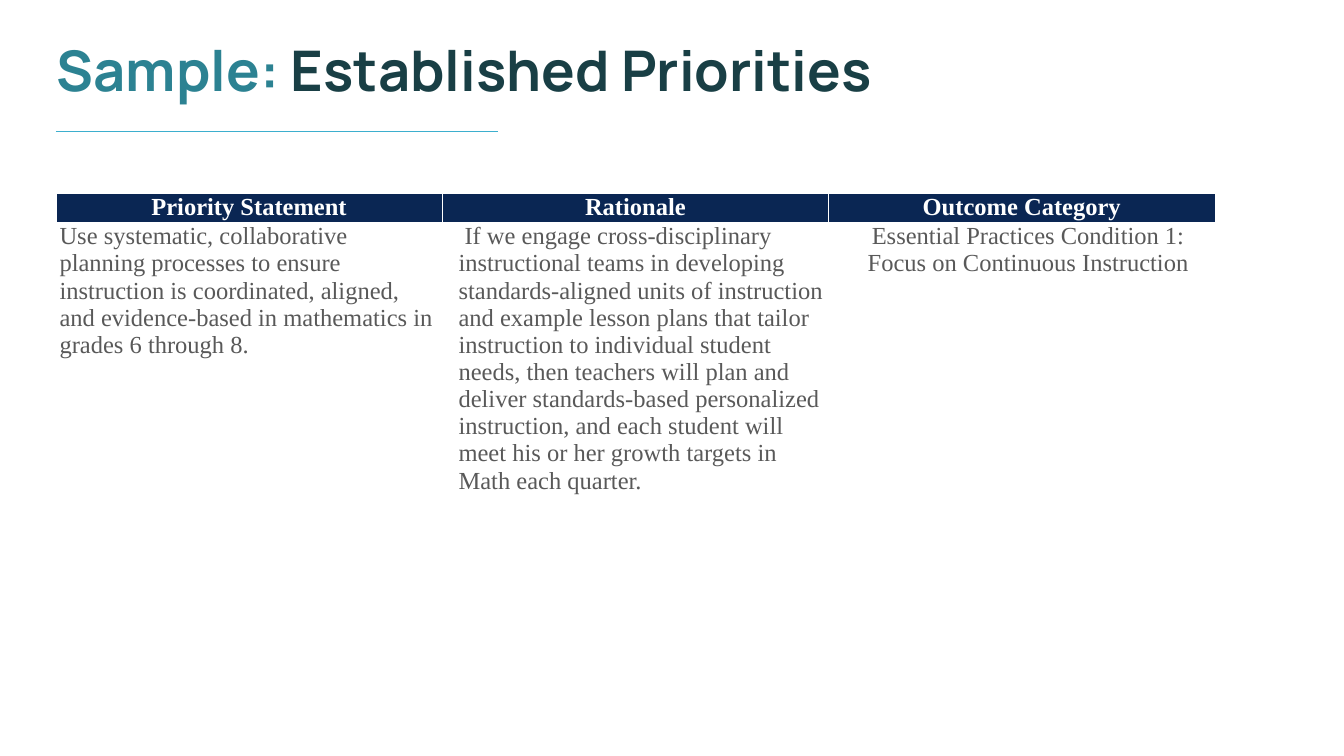
from collections import namedtuple
from dataclasses import dataclass

from lxml.etree import SubElement
from pptx import Presentation
from pptx.dml.color import RGBColor as Color
from pptx.enum.shapes import MSO_CONNECTOR as Connector
from pptx.enum.text import MSO_ANCHOR as Anchor, PP_ALIGN as Align
from pptx.oxml import parse_xml
from pptx.oxml.ns import nsdecls, qn
from pptx.util import Cm, Pt

Box = namedtuple("Box", "left top width height")


@dataclass(frozen=True)
class Theme:
    """Colours, fonts and type sizes of the slide."""
    teal: str = "2C8292"
    dark_teal: str = "193F45"
    rule: str = "3DAFCE"
    navy: str = "0A2653"
    grey: str = "595959"
    white: str = "FFFFFF"
    title_font: str = "Manrope"
    table_font: str = "Times New Roman"
    title_size: int = 80
    table_size: int = 35


THEME = Theme()

PRIORITIES = [
    ("Priority Statement",
     "Use systematic, collaborative planning processes to ensure instruction is "
     "coordinated, aligned, and evidence-based in mathematics in grades 6 through 8.",
     Align.LEFT, 0, 0),
    ("Rationale",
     "If we engage cross-disciplinary instructional teams in developing "
     "standards-aligned units of instruction and example lesson plans that tailor "
     "instruction to individual student needs, then teachers will plan and deliver "
     "standards-based personalized instruction, and each student will meet his or her "
     "growth targets in Math each quarter.",
     Align.LEFT, 0.64, 0.3),
    ("Outcome Category",
     "Essential Practices Condition 1: Focus on Continuous Instruction",
     Align.CENTER, 0.64, 0),
]


def style_font(font, name, size, color, bold):
    """Set the face, size, colour and weight of a font."""
    font.name = name
    font.size = Pt(size)
    font.bold = bold
    font.color.rgb = Color.from_string(color)


def add_title(slide, box):
    """Place the two-coloured title, centred vertically in the box."""
    shape = slide.shapes.add_textbox(*map(Cm, box))
    text_frame = shape.text_frame
    text_frame.word_wrap = True
    text_frame.vertical_anchor = Anchor.MIDDLE
    text_frame.margin_left = text_frame.margin_right = Cm(0.51)
    text_frame.margin_top = text_frame.margin_bottom = Cm(0.25)
    paragraph = text_frame.paragraphs[0]
    paragraph.line_spacing = 0.9
    for text, color in (("Sample:", THEME.teal),
                        (" Established Priorities", THEME.dark_teal)):
        run = paragraph.add_run()
        run.text = text
        style_font(run.font, THEME.title_font, THEME.title_size, color, True)


def add_rule(slide, box):
    """Draw the thin rule along the top of the box."""
    left, top, width = Cm(box.left), Cm(box.top), Cm(box.width)
    rule = slide.shapes.add_connector(Connector.STRAIGHT, left, top, left + width, top)
    rule.line.color.rgb = Color.from_string(THEME.rule)
    rule.line.width = Pt(1)
    SubElement(rule._element.spPr, qn("a:effectLst"))


def set_borders(cell, bottom):
    """Give a cell white borders, with the bottom one in its own width."""
    properties = cell._tc.get_or_add_tcPr()
    for index, side in enumerate("LRTB"):
        width = Pt(bottom if side == "B" else 1)
        properties.insert(index, parse_xml(
            f'<a:ln{side} {nsdecls("a")} w="{width}"><a:solidFill>'
            f'<a:srgbClr val="{THEME.white}"/></a:solidFill></a:ln{side}>'))


def fill_cell(cell, text, color, bold, align):
    """Write one table cell and return its paragraph."""
    cell.margin_left = cell.margin_right = Cm(0.18)
    cell.margin_top = cell.margin_bottom = 0
    cell.text_frame.text = text
    paragraph = cell.text_frame.paragraphs[0]
    paragraph.alignment = align
    style_font(paragraph.runs[0].font, THEME.table_font, THEME.table_size, color, bold)
    return paragraph


def add_priority_table(slide, box):
    """Place the priorities in equal columns under a navy header."""
    table = slide.shapes.add_table(2, len(PRIORITIES), *map(Cm, box)).table
    table.horz_banding = False
    header_height = 1.37
    table.rows[0].height = Cm(header_height)
    table.rows[1].height = Cm(box.height - header_height)
    for index, (heading, text, align, indent, first_line) in enumerate(PRIORITIES):
        table.columns[index].width = Cm(box.width / len(PRIORITIES))
        header, body = table.cell(0, index), table.cell(1, index)
        fill_cell(header, heading, THEME.white, True, Align.CENTER)
        header.fill.solid()
        header.fill.fore_color.rgb = Color.from_string(THEME.navy)
        set_borders(header, 3)
        paragraph = fill_cell(body, text, THEME.grey, False, align)
        properties = paragraph._p.get_or_add_pPr()
        properties.set("marL", str(Cm(indent)))
        properties.set("indent", str(Cm(first_line)))
        body.fill.background()
        set_borders(body, 1)


def main():
    """Build the slide and save it."""
    presentation = Presentation()
    presentation.slide_width = Cm(67.72)
    presentation.slide_height = Cm(38.1)
    slide = presentation.slides.add_slide(presentation.slide_layouts[6])
    add_title(slide, Box(2.36, 0, 58.4, 7.37))
    add_rule(slide, Box(2.82, 6.6, 22.28, 0))
    add_priority_table(slide, Box(2.82, 9.75, 58.4, 16.31))
    presentation.save("out.pptx")


if __name__ == "__main__":
    main()
